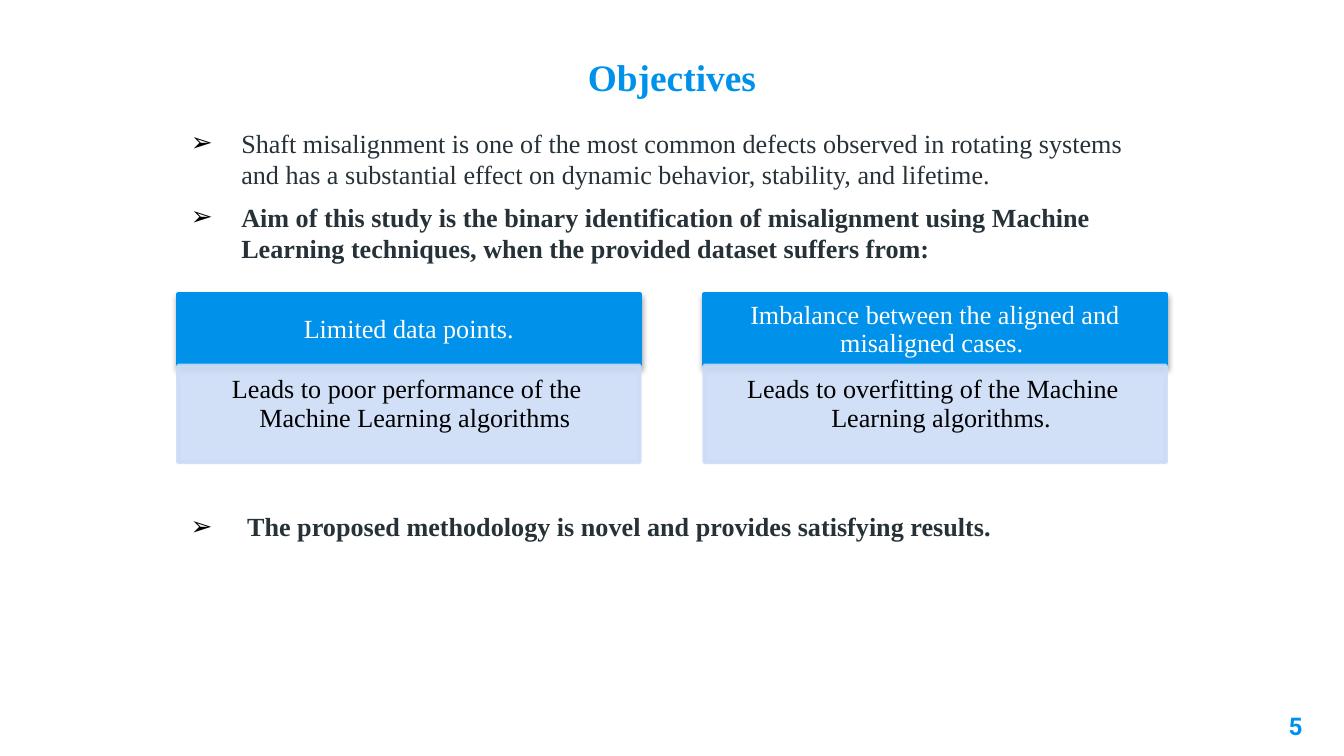
"""Build the Objectives slide: bullets around two problem-and-effect cards."""
import lxml.etree
import pptx
import pptx.dml.color
import pptx.enum.shapes
import pptx.enum.text
import pptx.oxml.ns
import pptx.util

COLORS = {"accent": "0091EA", "pale": "CCDCF7", "ink": "263238",
          "black": "000000", "white": "FFFFFF"}
SERIF = "Times New Roman"
ALIGN = pptx.enum.text.PP_ALIGN
ANCHOR = pptx.enum.text.MSO_ANCHOR

TITLE = "Objectives"
AIMS = [
    ("Shaft misalignment is one of the most common defects observed in rotating systems "
     "and has a substantial effect on dynamic behavior, stability, and lifetime.", False),
    ("Aim of this study is the binary identification of misalignment using Machine "
     "Learning techniques, when the provided dataset suffers from:", True),
]
CARDS = [
    ("Limited data points.",
     "Leads to poor performance of the Machine Learning algorithms"),
    ("Imbalance between the aligned and misaligned cases. ",
     "Leads to overfitting of the Machine Learning algorithms."),
]
CLOSING = [(" The proposed methodology is novel and provides satisfying results.", True)]
PAGE_NUMBER = "5"

PX_EMU = 4572
SLIDE_WIDTH, SLIDE_HEIGHT = 2000, 1125
LEFT, CONTENT_WIDTH = 264, 1472
CARD_LEFT, CARD_WIDTH, CARD_STEP = 265, 687, 783
CARD_TOP, HEAD_HEIGHT, EFFECT_HEIGHT = 438, 106, 144


def px(length):
    return pptx.util.Emu(length * PX_EMU)


def color(name):
    return pptx.dml.color.RGBColor.from_string(COLORS[name])


def add_xml(parent, tag, **attributes):
    return lxml.etree.SubElement(parent, pptx.oxml.ns.qn(tag), attributes)


def place(box, left, top, width, height):
    box.left, box.top, box.width, box.height = map(px, (left, top, width, height))


def set_frame(box, anchor=ANCHOR.TOP, insets=(20, 10, 20, 10)):
    frame = box.text_frame
    frame.word_wrap = True
    frame.auto_size = pptx.enum.text.MSO_AUTO_SIZE.NONE
    frame.vertical_anchor = anchor
    (frame.margin_left, frame.margin_top,
     frame.margin_right, frame.margin_bottom) = map(px, insets)
    return frame


def write(para, text, size=14, font=SERIF, ink="ink", bold=False,
          align=ALIGN.LEFT, spacing=1.0, before=0, hang=0, bullet=None):
    para.alignment = align
    para.line_spacing = spacing
    para.space_before = pptx.util.Pt(before)
    properties = para._p.get_or_add_pPr()
    properties.set("marL", str(px(hang)))
    properties.set("indent", str(px(-hang)))
    if bullet:
        add_xml(add_xml(properties, "a:buClr"), "a:srgbClr", val=COLORS["black"])
        add_xml(properties, "a:buFont", typeface="Arial")
        add_xml(properties, "a:buChar", char=bullet)
    span = para.add_run()
    span.text = text
    span.font.name, span.font.size, span.font.bold = font, pptx.util.Pt(size), bold
    span.font.color.rgb = color(ink)


def write_bullets(box, items):
    frame = set_frame(box)
    for index, (text, bold) in enumerate(items):
        para = frame.add_paragraph() if index else frame.paragraphs[0]
        write(para, text, bold=bold, before=6 if index else 0, hang=75, bullet="➢")


def add_panel(page, left, top, height, fill):
    panel = page.shapes.add_shape(pptx.enum.shapes.MSO_SHAPE.RECTANGLE,
                                  px(left), px(top), px(CARD_WIDTH), px(height))
    panel.shadow.inherit = False
    panel.fill.solid()
    panel.fill.fore_color.rgb = color(fill)
    panel.line.color.rgb = color(fill)
    panel.line.width = pptx.util.Pt(2)
    return panel


def add_card(page, left, heading, effect):
    head = add_panel(page, left, CARD_TOP, HEAD_HEIGHT, "accent")
    effects = head._element.spPr.find(pptx.oxml.ns.qn("a:effectLst"))
    shadow = add_xml(effects, "a:outerShdw", blurRad=str(pptx.util.Pt(3.1)),
                     dist=str(pptx.util.Pt(1.6)), dir="5400000", rotWithShape="0")
    add_xml(add_xml(shadow, "a:srgbClr", val=COLORS["black"]), "a:alpha", val="38000")
    frame = set_frame(head, ANCHOR.MIDDLE, (22, 12, 22, 12))
    write(frame.paragraphs[0], heading, ink="white", align=ALIGN.CENTER, spacing=0.9)

    body = add_panel(page, left, CARD_TOP + HEAD_HEIGHT, EFFECT_HEIGHT, "pale")
    for tint in body._element.spPr.iter(pptx.oxml.ns.qn("a:srgbClr")):
        add_xml(tint, "a:alpha", val="90000")
    frame = set_frame(body, insets=(16, 16, 22, 24))
    write(frame.paragraphs[0], effect, ink="black", align=ALIGN.CENTER,
          spacing=0.9, hang=24)


def main():
    deck = pptx.Presentation()
    deck.slide_width, deck.slide_height = px(SLIDE_WIDTH), px(SLIDE_HEIGHT)
    page = deck.slides.add_slide(deck.slide_layouts[1])

    title = page.shapes.title
    place(title, 808, 65, 384, 102)
    write(set_frame(title, ANCHOR.BOTTOM, (20,) * 4).paragraphs[0], TITLE,
          size=20, ink="accent", bold=True, align=ALIGN.CENTER)

    aims = page.placeholders[1]
    place(aims, LEFT, 179, CONTENT_WIDTH, 418)
    write_bullets(aims, AIMS)

    for index, (heading, effect) in enumerate(CARDS):
        add_card(page, CARD_LEFT + index * CARD_STEP, heading, effect)

    closing = page.shapes.add_textbox(px(LEFT), px(750), px(CONTENT_WIDTH), px(68))
    write_bullets(closing, CLOSING)

    number = page.shapes.add_textbox(px(1838), px(1039), px(120), px(86))
    write(set_frame(number, insets=(20,) * 4).paragraphs[0], PAGE_NUMBER, size=13,
          font="Roboto", ink="accent", bold=True, align=ALIGN.RIGHT)

    deck.save("out.pptx")


if __name__ == "__main__":
    main()
